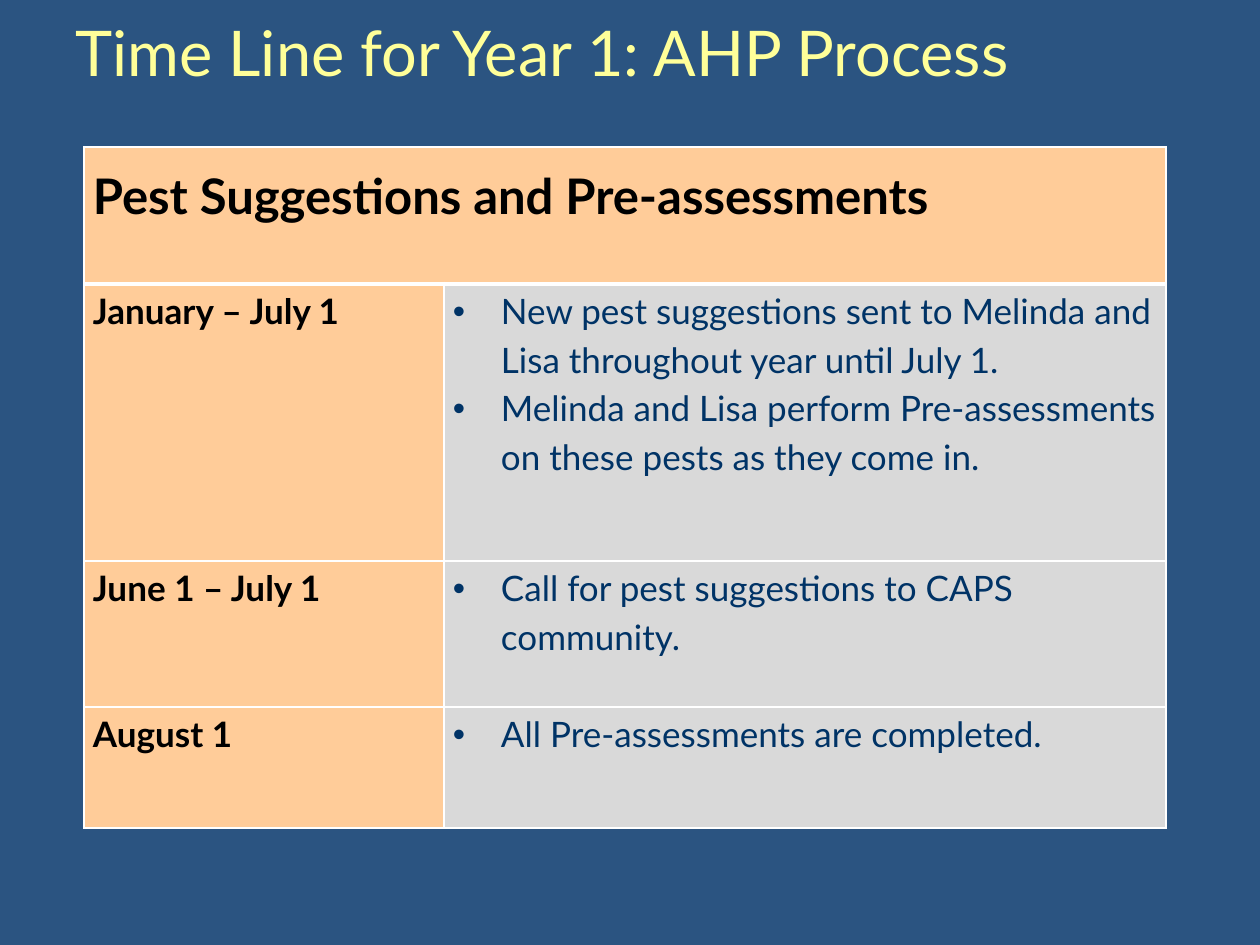
from dataclasses import dataclass

from lxml import etree
from pptx import Presentation
from pptx import util as u
from pptx.dml.color import RGBColor
from pptx.enum import text
from pptx.oxml.ns import qn

SCALE = 914400 / 126
NAVY = RGBColor(0x2B, 0x54, 0x81)
YELLOW = RGBColor(0xFF, 0xFF, 0x99)
PEACH = RGBColor(0xFF, 0xCC, 0x99)
GREY = RGBColor(0xD9, 0xD9, 0xD9)
INK = RGBColor(0x00, 0x33, 0x66)
BLACK = RGBColor(0, 0, 0)
WHITE = RGBColor(0xFF, 0xFF, 0xFF)
FONT = "Lato"
COLS = (360, 722)
HEAD = 137


@dataclass
class Phase:
    date: str
    tasks: tuple[str, ...]
    high: int


PHASES = (
    Phase("January – July 1", (
        "New pest suggestions sent to Melinda and Lisa throughout year until July 1.",
        "Melinda and Lisa perform Pre-assessments on these pests as they come in.",
    ), 277),
    Phase("June 1 – July 1", ("Call for pest suggestions to CAPS community.",), 146),
    Phase("August 1", ("All Pre-assessments are completed.",), 121),
)


def px(n: int) -> u.Emu:
    return u.Emu(round(n * SCALE))


def style(par, size: int, color: RGBColor, bold: bool = False) -> None:
    font = par.font
    font.name, font.size, font.bold = FONT, u.Pt(size), bold
    font.color.rgb = color


def bullet(par) -> None:
    props = par._p.get_or_add_pPr()
    props.set("marL", str(px(48)))
    props.set("indent", str(px(-48)))
    etree.SubElement(props, qn("a:buFont"), typeface="Arial")
    etree.SubElement(props, qn("a:buChar"), char="•")


def border(cell, top: int = 1, base: int = 1) -> None:
    props = cell._tc.get_or_add_tcPr()
    for side, width in zip("LRTB", (1, 1, top, base)):
        line = etree.SubElement(props, qn(f"a:ln{side}"), w=str(u.Pt(width)))
        fill = etree.SubElement(line, qn("a:solidFill"))
        etree.SubElement(fill, qn("a:srgbClr"), val=str(WHITE))


def paint(cell, fill: RGBColor, top: int = 1, base: int = 1) -> None:
    border(cell, top, base)
    cell.fill.solid()
    cell.fill.fore_color.rgb = fill
    cell.margin_left = cell.margin_right = px(9)
    cell.margin_top = cell.margin_bottom = 0


def write(cell, lines: tuple[str, ...], size: int, color: RGBColor,
          bold: bool = False, dots: bool = False) -> None:
    frame = cell.text_frame
    for i, line in enumerate(lines):
        par = frame.add_paragraph() if i else frame.paragraphs[0]
        par.text = line
        par.line_spacing = 1.15
        if dots:
            bullet(par)
        style(par, size, color, bold)


def title(slide) -> None:
    box = slide.shapes.add_textbox(px(63), px(32), px(1134), px(115))
    frame = box.text_frame
    frame.word_wrap = True
    frame.vertical_anchor = text.MSO_ANCHOR.MIDDLE
    par = frame.paragraphs[0]
    par.text = "Time Line for Year 1: AHP Process"
    par.add_line_break()
    style(par, 36, YELLOW)


def grid(slide) -> None:
    rows = (HEAD, *(phase.high for phase in PHASES))
    table = slide.shapes.add_table(len(rows), len(COLS), px(84), px(147),
                                   px(sum(COLS)), px(sum(rows))).table
    table.first_row = table.horz_banding = False
    for col, width in zip(table.columns, COLS):
        col.width = px(width)
    for row, high in zip(table.rows, rows):
        row.height = px(high)

    head = table.cell(0, 0)
    head.merge(table.cell(0, 1))
    for col in range(len(COLS)):
        paint(table.cell(0, col), PEACH, base=3)
    head.vertical_anchor = text.MSO_ANCHOR.MIDDLE
    head.margin_bottom = px(48)
    write(head, ("Pest Suggestions and Pre-assessments",), 28, BLACK, bold=True)

    for i, phase in enumerate(PHASES, 1):
        date, tasks = table.cell(i, 0), table.cell(i, 1)
        top = 3 if i == 1 else 1
        paint(date, PEACH, top)
        paint(tasks, GREY, top)
        write(date, (phase.date,), 20, BLACK, bold=True)
        write(tasks, phase.tasks, 20, INK, dots=True)


def main() -> None:
    deck = Presentation()
    deck.slide_width, deck.slide_height = px(1260), px(945)
    slide = deck.slides.add_slide(deck.slide_layouts[6])
    back = slide.background.fill
    back.solid()
    back.fore_color.rgb = NAVY
    title(slide)
    grid(slide)
    deck.save("out.pptx")


if __name__ == "__main__":
    main()
